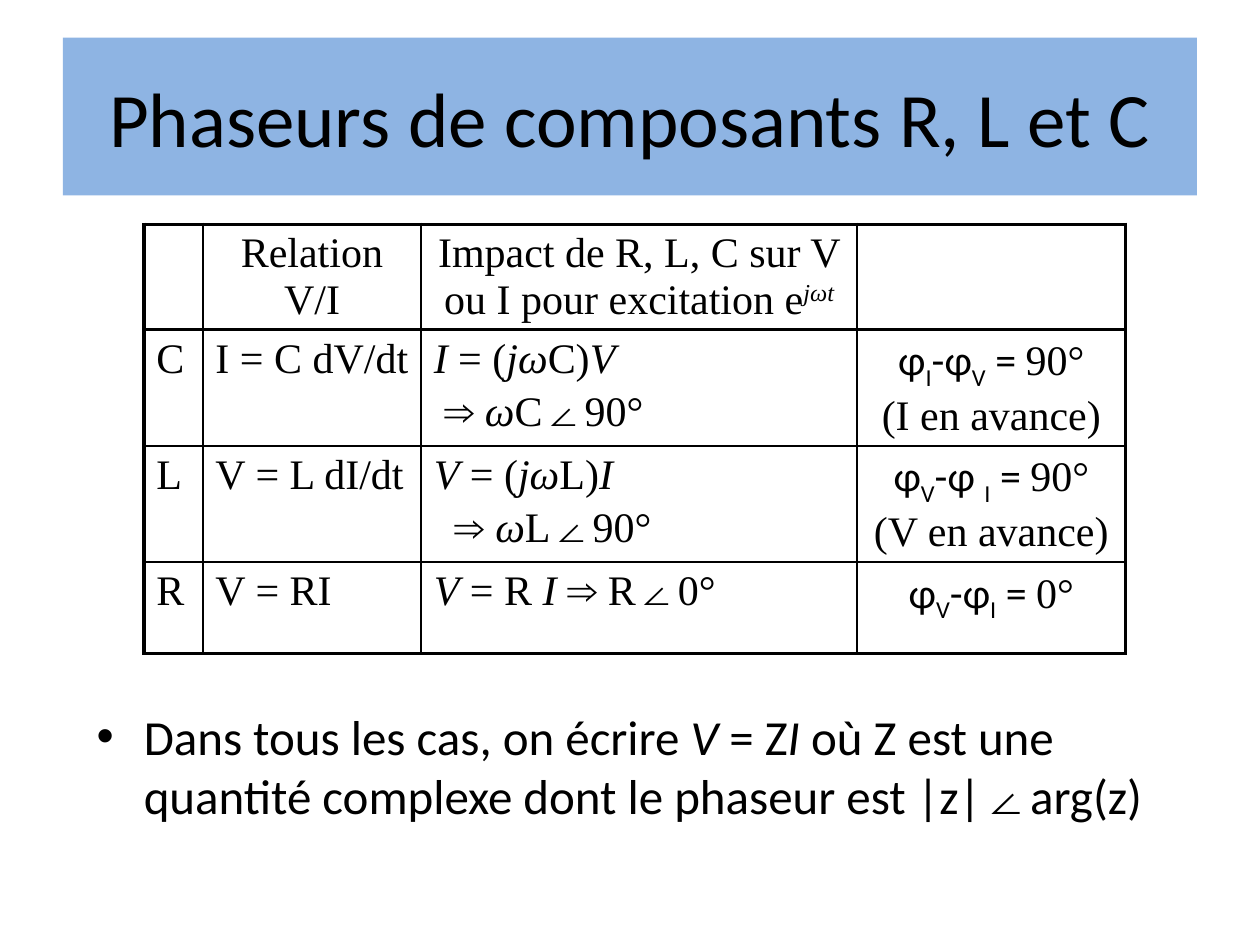
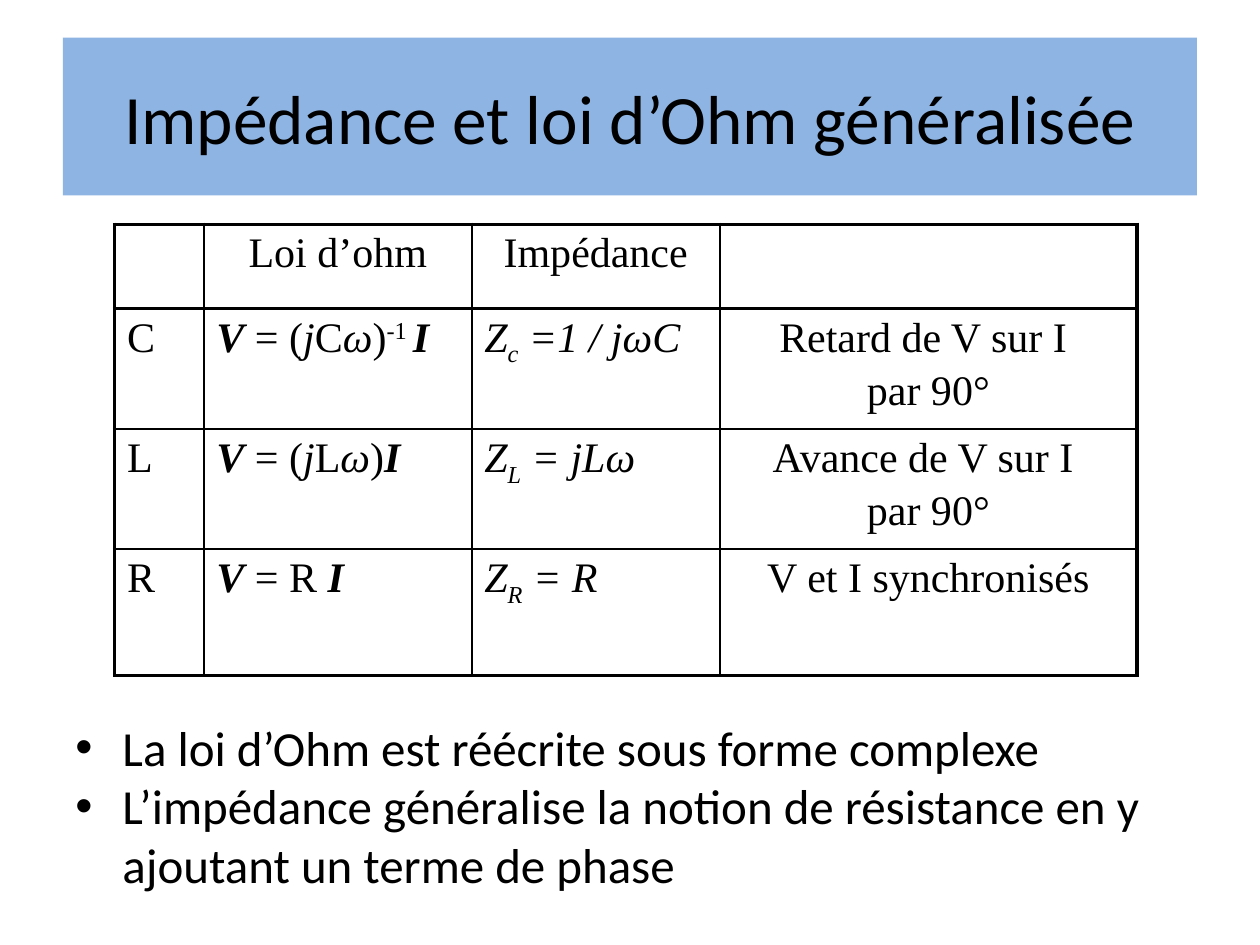
from dataclasses import dataclass, field
from typing import NamedTuple

from lxml.etree import SubElement
from pptx import Presentation
from pptx.dml.color import RGBColor
from pptx.enum.shapes import MSO_SHAPE
from pptx.enum.text import MSO_ANCHOR, PP_ALIGN
from pptx.oxml import parse_xml
from pptx.oxml.ns import nsdecls, qn
from pptx.util import Cm, Pt

COLORS = {"band": "8EB4E3", "ink": "000000"}
BODY_FONT = "Calibri"
TABLE_FONT = "Times New Roman"
TABLE_SIZE = 24
BULLET_SIZE = 28
THICK, THIN = Pt(2.25), Pt(1)

FONT_FORMATS = {
    "italic": {"italic": True},
    "bold italic": {"bold": True, "italic": True},
    "body": {"name": BODY_FONT},
    "body sub": {"name": BODY_FONT},
    "table": {"name": TABLE_FONT},
    "italic sub": {"italic": True},
    "italic super": {"italic": True},
}
BASELINES = {"sub": "-25000", "super": "30000"}


class Span(NamedTuple):
    text: str
    style: str = ""


class Line(NamedTuple):
    spans: list[Span]
    indent: float = 0


@dataclass
class Grid:
    left: float
    columns: list[float]
    rows: list[float]
    cells: list[list[list[Line]]]
    top: float = 4.52


@dataclass
class Content:
    title: str
    title_size: float
    grid: Grid
    bullet_area: tuple[float, float, float, float]
    bullets: list[Line] = field(default_factory=list)


def line(*parts: str | tuple[str, str], indent: float = 0) -> Line:
    """Make a line from plain strings and (text, style) pairs."""
    return Line([Span(part) if isinstance(part, str) else Span(*part) for part in parts], indent)


def plain(*texts: str) -> list[Line]:
    return [line(text) for text in texts]


def phase(first: str, joint: str, second: str, angle: str, remark: str = "") -> list[Line]:
    """Phase difference between two quantities, with a remark below it."""
    parts = [("φ", "body"), (first, "body sub"), (joint, "body"),
             (second, "body sub"), (" = ", "body"), angle]
    return [line(*parts, *(["\n", remark] if remark else []))]


def ohm(*factor: str | tuple[str, str]) -> list[Line]:
    return [line(("V", "bold italic"), " = ", *factor, ("I", "bold italic"))]


def impedance(index: str, value: str) -> list[Line]:
    return [line(("Z", "italic"), (index, "italic sub"), (value, "italic"))]


def reactive(result: str, component: str, source: str, indent: float) -> list[Line]:
    """Phasor relation of a reactive component and the impedance it implies."""
    return [
        line((result, "italic"), " = (", ("jω", "italic"), f"{component})", (source, "italic")),
        line("⇒ ", ("ω", "italic"), f"{component}∠90°", indent=indent),
    ]


PAGES = [
    Content(
        title="Phaseurs de composants R, L et C",
        title_size=44,
        grid=Grid(
            left=2.9,
            columns=[1.19, 4.4, 8.79, 5.41],
            rows=[2.12, 2.34, 2.34, 1.85],
            cells=[
                [[], plain("Relation V/I"),
                 [line("Impact de R, L, C sur V ou I pour excitation e", ("jωt", "italic super"))],
                 []],
                [plain("C"), plain("I = C dV/dt"), reactive("I", "C", "V", 0.21),
                 phase("I", "-φ", "V", "90°", "(I en avance)")],
                [plain("L"), plain("V = L dI/dt"), reactive("V", "L", "I", 0.42),
                 phase("V", "-φ ", "I", "90°", "(V en avance)")],
                [plain("R"), plain("V = RI"),
                 [line(("V", "italic"), " = R ", ("I ", "italic"), "⇒ R∠0°")],
                 phase("V", "-φ", "I", "0°")],
            ],
        ),
        bullet_area=(1.7, 14.12, 22.81, 2.59),
        bullets=[line("Dans tous les cas, on écrire ", ("V", "italic"), " = Z", ("I ", "italic"),
                      "où Z est une quantité complexe dont le phaseur est |z|",
                      ("∠", "table"), "arg(z)")],
    ),
    Content(
        title="Impédance et loi d’Ohm généralisée",
        title_size=39.6,
        grid=Grid(
            left=2.31,
            columns=[1.8, 5.4, 5, 8.41],
            rows=[1.7, 2.43, 2.42, 2.54],
            cells=[
                [[], plain("Loi d’ohm"), plain("Impédance"), []],
                [plain("C"),
                 ohm("(", ("j", "italic"), "C", ("ω", "italic"), ")", ("-1 ", "super")),
                 impedance("c", " =1 / jωC"), plain("Retard de V sur I ", "par 90°")],
                [plain("L"), ohm("(", ("j", "italic"), "L", ("ω", "italic"), ")"),
                 impedance("L", " = jLω"), plain("Avance de V sur I ", "par 90°")],
                [plain("R"), ohm("R "), impedance("R", " = R"), plain("V et I synchronisés")],
            ],
        ),
        bullet_area=(1.27, 14.33, 23.24, 3.99),
        bullets=plain("La loi d’Ohm est réécrite sous forme complexe",
                      "L’impédance généralise la notion de résistance en y "
                      "ajoutant un terme de phase"),
    ),
]


def color(name: str) -> RGBColor:
    return RGBColor.from_string(COLORS[name])


def write_line(para, content: Line, font: str, size: float) -> None:
    for span in content.spans:
        if span.text == "\n":
            para.add_line_break()
            continue
        run = para.add_run()
        run.text = span.text
        formats = {"name": font, "size": Pt(size), "bold": False, "italic": False}
        formats |= FONT_FORMATS.get(span.style, {})
        for name, value in formats.items():
            setattr(run.font, name, value)
        run.font.color.rgb = color("ink")
        for name, baseline in BASELINES.items():
            if name in span.style.split():
                run.font._element.set("baseline", baseline)


def write_lines(frame, lines: list[Line], font: str, size: float) -> list:
    paras = []
    for number, content in enumerate(lines):
        para = frame.add_paragraph() if number else frame.paragraphs[0]
        write_line(para, content, font, size)
        paras.append(para)
    return paras


def draw_title(page, text: str, size: float) -> None:
    band = page.shapes.add_shape(MSO_SHAPE.RECTANGLE, Cm(1.27), Cm(0.76), Cm(22.86), Cm(3.18))
    band.shadow.inherit = False
    band.fill.solid()
    band.fill.fore_color.rgb = color("band")
    band.line.fill.background()
    frame = band.text_frame
    frame.word_wrap = True
    frame.vertical_anchor = MSO_ANCHOR.MIDDLE
    for para in write_lines(frame, plain(text), BODY_FONT, size):
        para.alignment = PP_ALIGN.CENTER


def set_borders(cell, widths: dict[str, int]) -> None:
    properties = cell._tc.get_or_add_tcPr()
    for position, (side, width) in enumerate(widths.items()):
        properties.insert(position, parse_xml(
            f'<a:ln{side} {nsdecls("a")} w="{int(width)}"><a:solidFill>'
            f'<a:srgbClr val="{COLORS["ink"]}"/></a:solidFill></a:ln{side}>'))


def draw_grid(page, grid: Grid) -> None:
    last_row, last_column = len(grid.rows) - 1, len(grid.columns) - 1
    table = page.shapes.add_table(
        len(grid.rows), len(grid.columns), Cm(grid.left), Cm(grid.top),
        Cm(sum(grid.columns)), Cm(sum(grid.rows))).table
    table.first_row = table.horz_banding = False
    for column, width in zip(table.columns, grid.columns):
        column.width = Cm(width)
    for row, height in zip(table.rows, grid.rows):
        row.height = Cm(height)
    for y, row_cells in enumerate(grid.cells):
        for x, lines in enumerate(row_cells):
            cell = table.cell(y, x)
            cell.fill.background()
            set_borders(cell, {
                "L": THICK if x == 0 else THIN,
                "R": THICK if x == last_column else THIN,
                "T": THICK if y <= 1 else THIN,
                "B": THICK if y in (0, last_row) else THIN,
            })
            paras = write_lines(cell.text_frame, lines, TABLE_FONT, TABLE_SIZE)
            for number, (para, content) in enumerate(zip(paras, lines)):
                if y == 0 or x == last_column:
                    para.alignment = PP_ALIGN.CENTER
                if number:
                    para.space_before = Pt(3.84)
                if content.indent:
                    para._p.get_or_add_pPr().set("marL", str(int(Cm(content.indent))))


def draw_bullets(page, area: tuple[float, float, float, float], lines: list[Line]) -> None:
    box = page.shapes.add_textbox(*map(Cm, area))
    box.text_frame.word_wrap = True
    hanging = int(Cm(0.95))
    for para in write_lines(box.text_frame, lines, BODY_FONT, BULLET_SIZE):
        properties = para._p.get_or_add_pPr()
        properties.set("marL", str(hanging))
        properties.set("indent", str(-hanging))
        SubElement(properties, qn("a:buFont")).set("typeface", "Arial")
        SubElement(properties, qn("a:buChar")).set("char", "•")


def main() -> None:
    deck = Presentation()
    deck.slide_width, deck.slide_height = Cm(25.4), Cm(19.05)
    for content in PAGES:
        page = deck.slides.add_slide(deck.slide_layouts[6])
        draw_title(page, content.title, content.title_size)
        draw_grid(page, content.grid)
        draw_bullets(page, content.bullet_area, content.bullets)
    deck.save("out.pptx")


if __name__ == "__main__":
    main()
